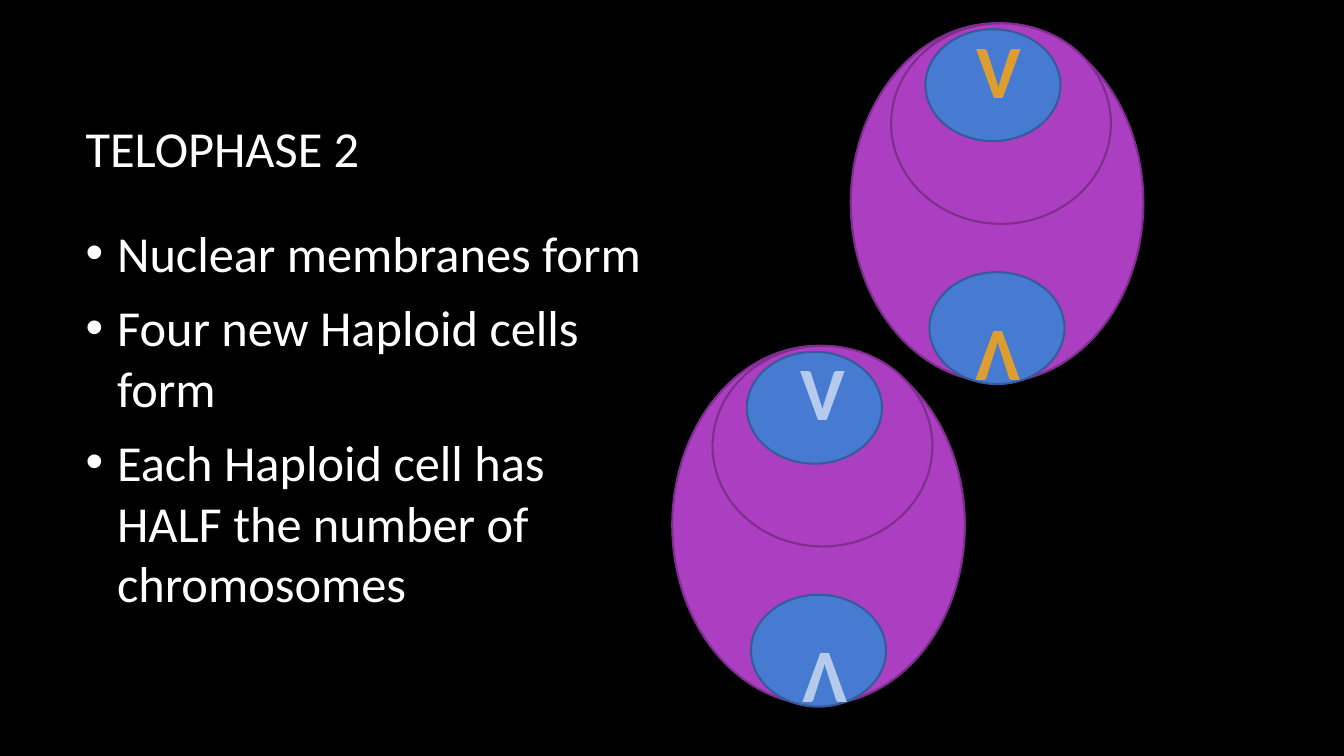
import pptx
import pptx.util
import pptx.dml.color
import pptx.enum.shapes
import pptx.enum.text
import pptx.oxml.ns
import lxml.etree

Pt = pptx.util.Pt
Align = pptx.enum.text.PP_ALIGN
Anchor = pptx.enum.text.MSO_ANCHOR


def tint(code):
    return pptx.dml.color.RGBColor.from_string(code)


def add_run(para, text, size, color, bold=False):
    run = para.add_run()
    run.text = text
    run.font.name = "Calibri"
    run.font.size = Pt(size)
    run.font.bold = bold
    run.font.color.rgb = tint(color)


def add_box(slide, left, top, width, height, wrap=True):
    box = slide.shapes.add_textbox(Pt(left), Pt(top), Pt(width), Pt(height))
    box.text_frame.word_wrap = wrap
    return box


def add_oval(slide, left, top, width, height, fill, edge):
    oval = slide.shapes.add_shape(
        pptx.enum.shapes.MSO_SHAPE.OVAL, Pt(left), Pt(top), Pt(width), Pt(height))
    oval.shadow.inherit = False
    oval.fill.solid()
    oval.fill.fore_color.rgb = tint(fill)
    oval.line.color.rgb = tint(edge)
    oval.line.width = Pt(1.5)


def add_mark(slide, left, top, color, turn):
    box = add_box(slide, left, top, 42.5, 72.7, wrap=False)
    box.rotation = turn
    para = box.text_frame.paragraphs[0]
    para.alignment = Align.CENTER
    add_run(para, "V", 54, color, bold=True)


def add_cell(slide, left, top, color, marks):
    body = ("AC3EC1", "7F2E8F")
    core = ("477BD1", "355B9B")
    add_oval(slide, left, top, 209, 256.3, *body)
    add_oval(slide, left + 56.2, top + 177.8, 96.5, 79.9, *core)
    add_oval(slide, left + 28.8, top, 157, 143.3, *body)
    add_oval(slide, left + 53.3, top + 4.3, 96.5, 79.9, *core)
    for (across, down), turn in zip(marks, (0, 180)):
        add_mark(slide, left + across, top + down, color, turn)


def add_title(slide, left, top, width, height, text):
    frame = add_box(slide, left, top, width, height).text_frame
    frame.vertical_anchor = Anchor.MIDDLE
    add_run(frame.paragraphs[0], text, 36, "FFFFFF")


def add_bullet(para):
    props = para._p.get_or_add_pPr()
    props.set("marL", str(Pt(22.5)))
    props.set("indent", str(-Pt(22.5)))
    name = pptx.oxml.ns.qn
    color = lxml.etree.SubElement(props, name("a:buClr"))
    lxml.etree.SubElement(color, name("a:srgbClr"), val="FFFFFF")
    lxml.etree.SubElement(props, name("a:buFont"), typeface="Arial")
    lxml.etree.SubElement(props, name("a:buChar"), char="•")


def add_list(slide, left, top, width, height, lines):
    frame = add_box(slide, left, top, width, height).text_frame
    frame.vertical_anchor = Anchor.MIDDLE
    frame.margin_bottom = Pt(49)
    for spot, line in enumerate(lines):
        para = frame.add_paragraph() if spot else frame.paragraphs[0]
        add_bullet(para)
        para.space_after = Pt(10)
        add_run(para, line, 36, "FFFFFF")


def main():
    deck = pptx.Presentation()
    deck.slide_width, deck.slide_height = Pt(960), Pt(540)
    slide = deck.slides.add_slide(deck.slide_layouts[6])
    back = slide.background.fill
    back.solid()
    back.fore_color.rgb = tint("000000")
    add_title(slide, 54, 48.2, 797.8, 114.5, "TELOPHASE 2")
    add_list(slide, 54, 168.5, 419, 304.6, (
        "Nuclear membranes form",
        "Four new Haploid cells form",
        "Each Haploid cell has HALF the number of chromosomes"))
    add_cell(slide, 607.7, 16.6, "DD9D31", ((82.8, -3.6), (85.7, 205.2)))
    add_cell(slide, 480.2, 247, "B5CAED", ((84.2, -4.3), (90, 204.5)))
    deck.save("out.pptx")


if __name__ == "__main__":
    main()
